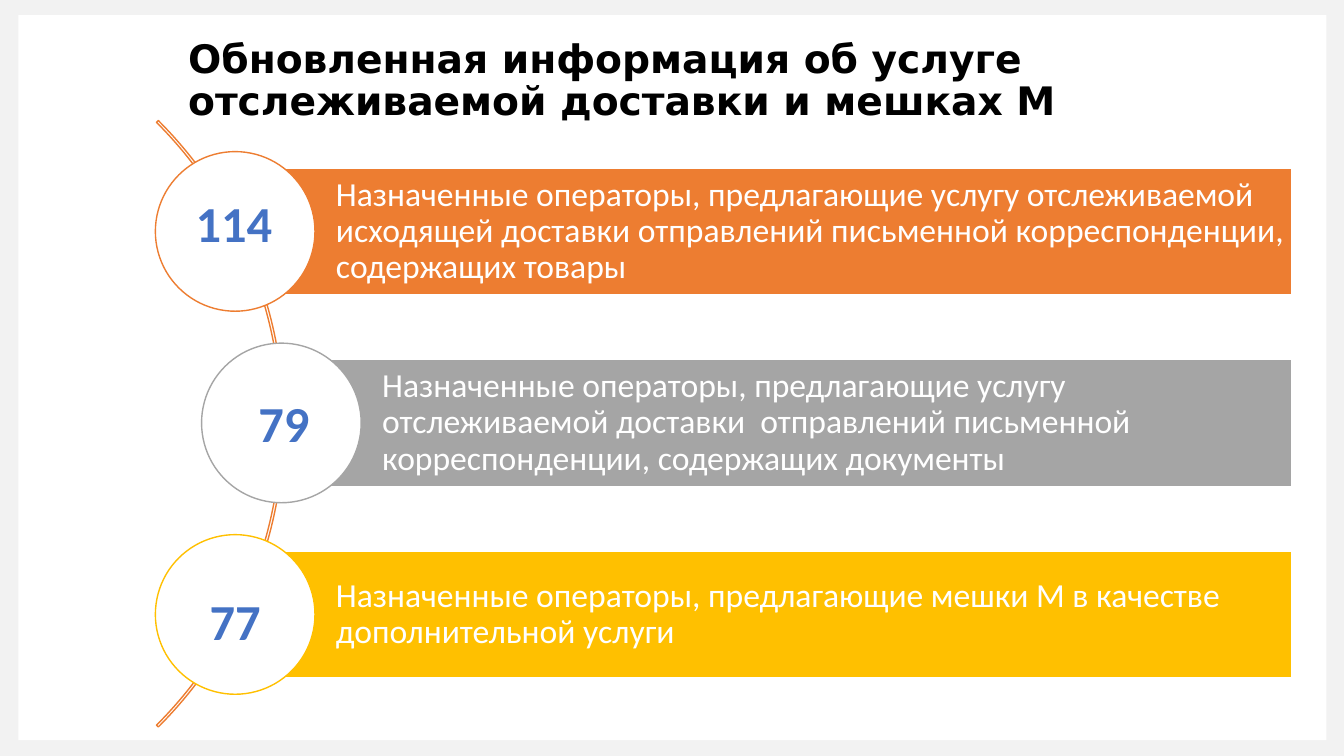
import dataclasses
import typing

import pptx
import pptx.dml.color
import pptx.enum.shapes
import pptx.enum.text
import pptx.presentation
import pptx.shapes.autoshape
import pptx.slide
import pptx.text.text
import pptx.util

RGBColor = pptx.dml.color.RGBColor
Preset = pptx.enum.shapes.MSO_SHAPE
Align = pptx.enum.text.PP_ALIGN
Anchor = pptx.enum.text.MSO_ANCHOR
AutoSize = pptx.enum.text.MSO_AUTO_SIZE

BLACK = RGBColor(0x00, 0x00, 0x00)
WHITE = RGBColor(0xFF, 0xFF, 0xFF)
FRAME_GREY = RGBColor(0xF2, 0xF2, 0xF2)
ORANGE = RGBColor(0xED, 0x7D, 0x31)
GREY = RGBColor(0xA5, 0xA5, 0xA5)
GOLD = RGBColor(0xFF, 0xC0, 0x00)
BLUE = RGBColor(0x44, 0x72, 0xC4)

CELL = pptx.util.Emu(762000)
COLUMNS, ROWS = 16, 9
FIRST_BAR_ROW, BAR_PITCH = 2, 2.28
BAR_RIGHT, BAR_HEIGHT = 15.38, 1.51
CIRCLE_SIZE = 1.9
NUMBER_WIDTH, NUMBER_HEIGHT = 1.32, 0.85

Format = dict[str, typing.Any]


def cells(count: float) -> pptx.util.Emu:
    """Turn a count of grid cells into a length."""
    return pptx.util.Emu(round(count * CELL))


TITLE_FONT: Format = {"name": "DejaVu Sans", "size": pptx.util.Pt(28), "bold": True}
LABEL_FONT: Format = {"name": "Calibri", "size": pptx.util.Pt(24), "bold": False}
NUMBER_FONT: Format = {"name": "Calibri", "size": pptx.util.Pt(36), "bold": True}
GROWING_FRAME: Format = {
    "word_wrap": True,
    "auto_size": AutoSize.SHAPE_TO_FIT_TEXT,
    "vertical_anchor": Anchor.TOP,
}
LABEL_FRAME: Format = {
    "word_wrap": True,
    "vertical_anchor": Anchor.MIDDLE,
    "margin_left": cells(1.2),
    "margin_top": cells(0.08),
    "margin_right": cells(0.08),
    "margin_bottom": cells(0.08),
}
TIGHT_LEFT: Format = {"alignment": Align.LEFT, "line_spacing": 0.9}


@dataclasses.dataclass(frozen=True)
class Box:
    """A place on the grid, in columns and rows."""

    column: float
    row: float
    width: float
    height: float

    def lengths(self) -> tuple[pptx.util.Emu, ...]:
        """Give left, top, width and height."""
        return tuple(cells(count) for count in dataclasses.astuple(self))


@dataclasses.dataclass(frozen=True)
class Service:
    """A count of operators and the service that they offer."""

    number: str
    label: str
    color: RGBColor
    bar_column: float
    number_column: float
    number_row: float
    number_align: Align = Align.CENTER


TITLE = "Обновленная информация об услуге отслеживаемой доставки и мешках M"
TITLE_BOX = Box(2.12, 0.41, 12.8, 1.14)
ARC_BOX = Box(-6.83, -0.06, 10.21, 10.21)
ARC_ADJUSTMENTS = (189, 27, 0.3 / 100)
SERVICES = (
    Service(
        "114",
        "Назначенные операторы, предлагающие услугу отслеживаемой исходящей доставки "
        "отправлений письменной корреспонденции, содержащих товары",
        ORANGE, 2.8, 2.21, 2.23, Align.LEFT,
    ),
    Service(
        "79",
        "Назначенные операторы, предлагающие услугу отслеживаемой доставки  "
        "отправлений письменной корреспонденции, содержащих документы",
        GREY, 3.35, 2.72, 4.61,
    ),
    Service(
        "77",
        "Назначенные операторы, предлагающие мешки M в качестве дополнительной услуги",
        GOLD, 2.8, 2.14, 6.97,
    ),
)


def apply_format(target: typing.Any, values: Format) -> None:
    """Set each attribute named in the format."""
    for attribute, value in values.items():
        setattr(target, attribute, value)


def write(
    frame: pptx.text.text.TextFrame,
    text: str,
    color: RGBColor,
    font: Format,
    layout: Format,
    paragraph_format: Format,
) -> None:
    """Fill a text frame with one formatted paragraph."""
    apply_format(frame, layout)
    paragraph = frame.paragraphs[0]
    apply_format(paragraph, paragraph_format)
    run = paragraph.add_run()
    run.text = text
    apply_format(run.font, font)
    run.font.color.rgb = color


def draw(
    slide: pptx.slide.Slide,
    preset: Preset,
    box: Box,
    fill: RGBColor | None = None,
    line: RGBColor | None = None,
) -> pptx.shapes.autoshape.Shape:
    """Draw a flat preset shape."""
    shape = slide.shapes.add_shape(preset, *box.lengths())
    shape.shadow.inherit = False
    if fill is None:
        shape.fill.background()
    else:
        shape.fill.solid()
        shape.fill.fore_color.rgb = fill
    if line is None:
        shape.line.fill.background()
    else:
        shape.line.color.rgb = line
        shape.line.width = pptx.util.Pt(1)
    return shape


def draw_title(slide: pptx.slide.Slide) -> None:
    """Place the title above the page panel."""
    title = slide.shapes.title
    places = zip(("left", "top", "width", "height"), TITLE_BOX.lengths())
    apply_format(title, dict(places))
    write(title.text_frame, TITLE, BLACK, TITLE_FONT, GROWING_FRAME, TIGHT_LEFT)
    slide.shapes._spTree.append(title._element)


def draw_service(slide: pptx.slide.Slide, service: Service, row: float) -> None:
    """Draw a labelled bar with a circle centred on its left end."""
    left, radius = service.bar_column, CIRCLE_SIZE / 2
    bar_box = Box(left, row, BAR_RIGHT - left, BAR_HEIGHT)
    bar = draw(slide, Preset.RECTANGLE, bar_box, service.color, WHITE)
    write(bar.text_frame, service.label, WHITE, LABEL_FONT, LABEL_FRAME, TIGHT_LEFT)
    circle_row = row + BAR_HEIGHT / 2 - radius
    circle_box = Box(left - radius, circle_row, CIRCLE_SIZE, CIRCLE_SIZE)
    draw(slide, Preset.OVAL, circle_box, WHITE, service.color)


def draw_number(slide: pptx.slide.Slide, service: Service) -> None:
    """Write the count over its circle."""
    box = Box(service.number_column, service.number_row, NUMBER_WIDTH, NUMBER_HEIGHT)
    number = slide.shapes.add_textbox(*box.lengths())
    alignment = {"alignment": service.number_align}
    write(number.text_frame, service.number, BLUE, NUMBER_FONT, GROWING_FRAME, alignment)


def main() -> None:
    """Build and save the slide."""
    deck = pptx.Presentation()
    deck.slide_width, deck.slide_height = cells(COLUMNS), cells(ROWS)
    slide = deck.slides.add_slide(deck.slide_layouts[5])
    draw(slide, Preset.RECTANGLE, Box(0, 0, COLUMNS, ROWS), FRAME_GREY)
    draw(slide, Preset.RECTANGLE, Box(0.22, 0.18, 15.57, 8.63), WHITE)
    draw_title(slide)
    arc = draw(slide, Preset.BLOCK_ARC, ARC_BOX, line=ORANGE)
    for index, adjustment in enumerate(ARC_ADJUSTMENTS):
        arc.adjustments[index] = adjustment
    for index, service in enumerate(SERVICES):
        draw_service(slide, service, FIRST_BAR_ROW + index * BAR_PITCH)
    for service in SERVICES:
        draw_number(slide, service)
    deck.save("out.pptx")


if __name__ == "__main__":
    main()
